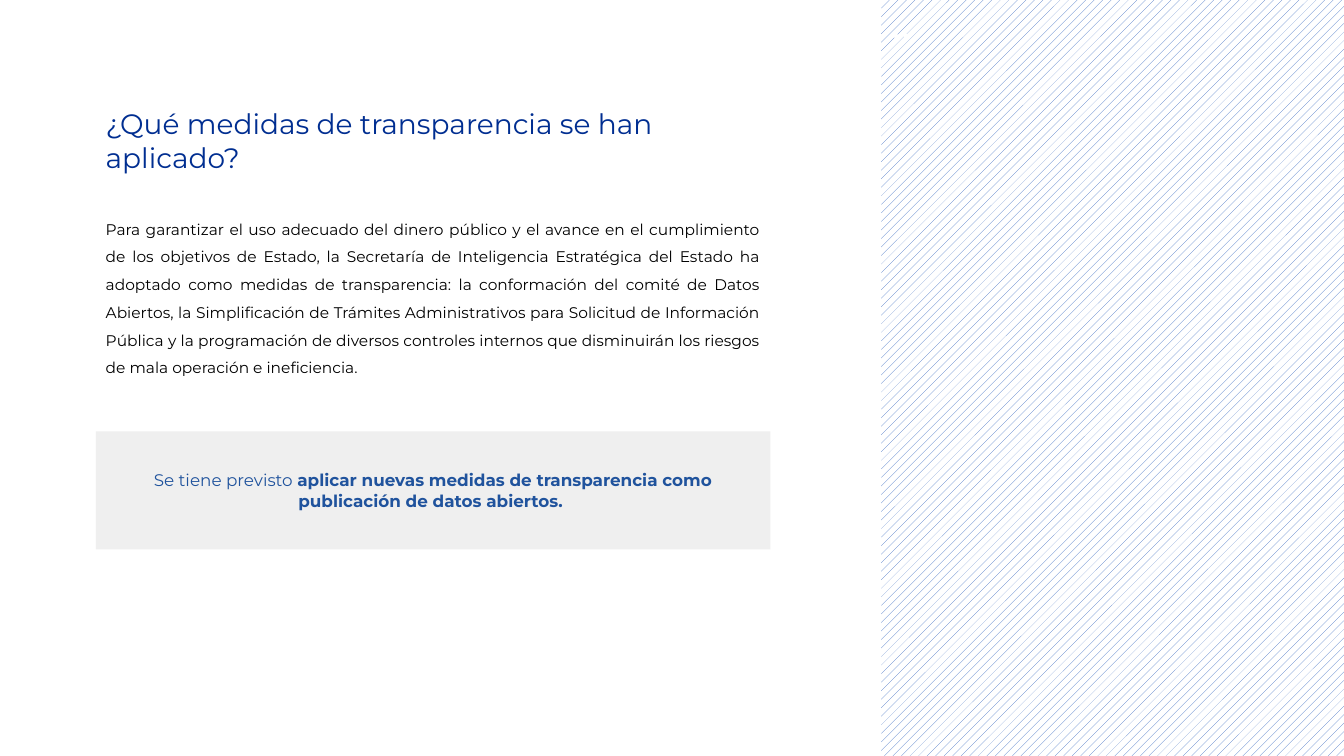
from pptx import Presentation
from pptx.dml.color import RGBColor
from pptx.enum.dml import MSO_PATTERN
from pptx.enum.shapes import MSO_SHAPE
from pptx.enum.text import MSO_ANCHOR, PP_ALIGN
from pptx.util import Inches, Pt

RECT = MSO_SHAPE.RECTANGLE
DOTS = MSO_PATTERN.PERCENT_20
TOP, MIDDLE = MSO_ANCHOR.TOP, MSO_ANCHOR.MIDDLE
LEFT, CENTER, JUSTIFY = PP_ALIGN.LEFT, PP_ALIGN.CENTER, PP_ALIGN.JUSTIFY

MARGIN = Inches(0.95)
COLUMN = Inches(6.69)


def rgb(color):
    return RGBColor.from_string(color)


def write(sp, *runs, size, color, font="Montserrat", align=LEFT,
          anchor=TOP, spacing=1.0):
    """Fill a shape with one paragraph of (text, bold) runs."""
    tf = sp.text_frame
    tf.word_wrap = True
    tf.vertical_anchor = anchor
    p = tf.paragraphs[0]
    p.alignment = align
    p.line_spacing = spacing
    for text, bold in runs:
        r = p.add_run()
        r.text = text
        r.font.name = font
        r.font.size = Pt(size)
        r.font.bold = bold
        r.font.color.rgb = rgb(color)


prs = Presentation()
prs.slide_width = Inches(13.33)
prs.slide_height = Inches(7.5)
s = prs.slides.add_slide(prs.slide_layouts[6])

# Heading
heading = s.shapes.add_textbox(MARGIN, Inches(1.01), Inches(6.45), Inches(0.77))
write(heading, ("¿Qué medidas de transparencia se han aplicado?", False),
      size=20, color="002E91")

# Body paragraph
body = s.shapes.add_textbox(MARGIN, Inches(2.04), COLUMN, Inches(1.74))
write(body, (
    "Para garantizar el uso adecuado del dinero público y el avance en el "
    "cumplimiento de los objetivos de Estado, la Secretaría de Inteligencia "
    "Estratégica del Estado ha adoptado como medidas de transparencia: la "
    "conformación del comité de Datos Abiertos, la Simplificación de Trámites "
    "Administrativos para Solicitud de Información Pública y la programación "
    "de diversos controles internos que disminuirán los riesgos de mala "
    "operación e ineficiencia.", False),
    size=11, color="000000", align=JUSTIFY, spacing=1.5)

# Patterned side panel
panel = s.shapes.add_shape(RECT, Inches(8.74), 0, Inches(4.59), prs.slide_height)
panel.shadow.inherit = False
panel.line.fill.background()
panel.fill.patterned()
panel.fill.pattern = DOTS
panel.fill.fore_color.rgb = rgb("4472C4")
panel.fill.back_color.rgb = rgb("FFFFFF")
write(panel, ("..", False), size=28, color="FFFFFF", font="Calibri", spacing=0.9)

# Callout
callout = s.shapes.add_shape(RECT, MARGIN, Inches(4.28), COLUMN, Inches(1.17))
callout.shadow.inherit = False
callout.line.fill.background()
callout.fill.solid()
callout.fill.fore_color.rgb = rgb("EFEFEF")
write(callout, ("Se tiene previsto ", False),
      ("aplicar nuevas medidas de transparencia como publicación de datos "
       "abiertos. ", True),
      size=12, color="20539D", align=CENTER, anchor=MIDDLE)

prs.save("out.pptx")
